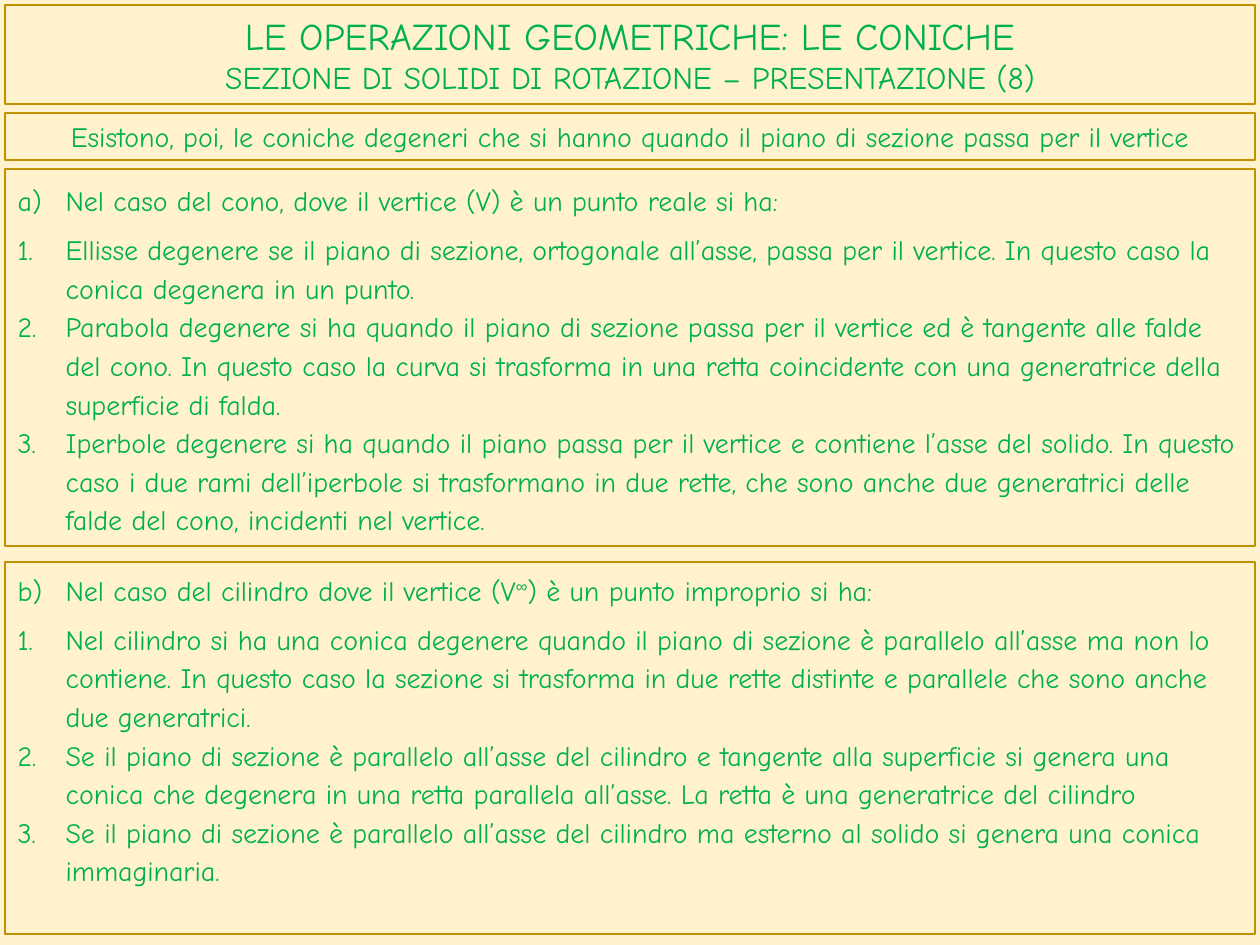
from dataclasses import dataclass

from lxml import etree
from pptx import Presentation
from pptx.dml.color import RGBColor
from pptx.enum.text import MSO_ANCHOR, MSO_AUTO_SIZE, PP_ALIGN
from pptx.oxml.ns import qn
from pptx.util import Inches, Pt

CENTER = PP_ALIGN.CENTER
TOP, MIDDLE = MSO_ANCHOR.TOP, MSO_ANCHOR.MIDDLE
NO_FIT = MSO_AUTO_SIZE.NONE
TWO_CONTENT = 3
PX_PER_INCH = 126


@dataclass(frozen=True)
class Theme:
    paper: RGBColor = RGBColor(0xFF, 0xF2, 0xCC)
    border: RGBColor = RGBColor(0xBF, 0x90, 0x00)
    ink: RGBColor = RGBColor(0x00, 0xB0, 0x50)
    face: str = "Comic Neue"
    symbol_face: str = "Arial"
    title: float = 21.6
    subtitle: float = 18
    text: float = 16
    border_width: float = 0.75


THEME = Theme()

# Boxes as left, top, width, height in px
TITLE_BOX = (5, 5, 1250, 99)
INTRO_BOX = (5, 113, 1250, 47)
CONE_BOX = (5, 169, 1250, 377)
CYLINDER_BOX = (5, 562, 1250, 372)
LIST_INDENT = 48

TITLE = "LE OPERAZIONI GEOMETRICHE: LE CONICHE"
SUBTITLE = "SEZIONE DI SOLIDI DI ROTAZIONE – PRESENTAZIONE (8)"
INTRO = ("Esistono, poi, le coniche degeneri che si hanno quando il piano "
         "di sezione passa per il vertice")
CONE_HEADING = ["Nel caso del cono, dove il vertice (V) è un punto reale si ha:"]
CONE_CASES = [
    "Ellisse degenere se il piano di sezione, ortogonale all’asse, passa per il "
    "vertice. In questo caso la conica degenera in un punto.",
    "Parabola degenere si ha quando il piano di sezione passa per il vertice ed è "
    "tangente alle falde del cono. In questo caso la curva si trasforma in una retta "
    "coincidente con una generatrice della superficie di falda.",
    "Iperbole degenere si ha quando il piano passa per il vertice e contiene l’asse "
    "del solido. In questo caso i due rami dell’iperbole si trasformano in due rette, "
    "che sono anche due generatrici delle falde del cono, incidenti nel vertice.",
]
CYLINDER_HEADING = ["Nel caso del cilindro dove il vertice (V", "∞",
                    ") è un punto improprio si ha:"]
CYLINDER_CASES = [
    "Nel cilindro si ha una conica degenere quando il piano di sezione è parallelo "
    "all’asse ma non lo contiene. In questo caso la sezione si trasforma in due rette "
    "distinte e parallele che sono anche due generatrici.",
    "Se il piano di sezione è parallelo all’asse del cilindro e tangente alla "
    "superficie si genera una conica che degenera in una retta parallela all’asse. "
    "La retta è una generatrice del cilindro",
    "Se il piano di sezione è parallelo all’asse del cilindro ma esterno al solido "
    "si genera una conica immaginaria.",
]


def px(length):
    return Inches(length / PX_PER_INCH)


def frame_box(region, box, anchor):
    """Place a region, outline it and return its text frame."""
    region.left, region.top, region.width, region.height = map(px, box)
    region.line.color.rgb = THEME.border
    region.line.width = Pt(THEME.border_width)
    frame = region.text_frame
    frame.word_wrap = True
    frame.auto_size = NO_FIT
    frame.vertical_anchor = anchor
    return frame


def style(font, size=THEME.text):
    font.name = THEME.face
    font.size = Pt(size)
    font.color.rgb = THEME.ink
    font.bold = False


def add_title(title, box):
    heading = frame_box(title, box, MIDDLE).paragraphs[0]
    heading.alignment = CENTER
    style(heading.font, THEME.title)
    first = heading.add_run()
    first.text = TITLE
    heading.add_line_break()
    second = heading.add_run()
    second.text = SUBTITLE
    second.font.size = Pt(THEME.subtitle)


def add_intro(slide, box):
    intro_box = slide.shapes.add_textbox(*map(px, box))
    intro = frame_box(intro_box, box, MIDDLE).paragraphs[0]
    intro.text = INTRO
    intro.alignment = CENTER
    style(intro.font)


def number(paragraph, scheme, start=1):
    """Automatic numbering with a hanging indent."""
    properties = paragraph._p.get_or_add_pPr()
    properties.set("marL", str(px(LIST_INDENT)))
    properties.set("indent", str(-px(LIST_INDENT)))
    etree.SubElement(properties, qn("a:buFont"), typeface=THEME.face)
    numbering = etree.SubElement(properties, qn("a:buAutoNum"), type=scheme)
    if start > 1:
        numbering.set("startAt", str(start))


def add_case_list(body, box, anchor, heading, cases, letter):
    """A lettered heading followed by numbered cases."""
    frame = frame_box(body, box, anchor)
    items = [heading] + [[case] for case in cases]
    for index, parts in enumerate(items):
        item = frame.paragraphs[0] if index == 0 else frame.add_paragraph()
        if index == 0:
            number(item, "alphaLcParenR", letter)
        else:
            number(item, "arabicPeriod")
        item.line_spacing = 1.15
        item.space_before = Pt(0)
        after = {0: 6, len(cases): 10}
        item.space_after = Pt(after.get(index, 0))
        style(item.font)
        for part in parts:
            run = item.add_run()
            run.text = part
            if part == "∞":
                run.font.name = THEME.symbol_face
                run._r.get_or_add_rPr().set("baseline", "30000")


def main():
    deck = Presentation()
    deck.slide_width, deck.slide_height = px(1260), px(945)
    slide = deck.slides.add_slide(deck.slide_layouts[TWO_CONTENT])
    slide.background.fill.solid()
    slide.background.fill.fore_color.rgb = THEME.paper
    cone, cylinder = list(slide.placeholders)[1:3]

    # Heading and introduction
    add_title(slide.shapes.title, TITLE_BOX)
    add_intro(slide, INTRO_BOX)

    # Degenerate conics of the cone and of the cylinder
    add_case_list(cone, CONE_BOX, MIDDLE, CONE_HEADING, CONE_CASES, 1)
    add_case_list(cylinder, CYLINDER_BOX, TOP, CYLINDER_HEADING, CYLINDER_CASES, 2)

    deck.save("out.pptx")


if __name__ == "__main__":
    main()
